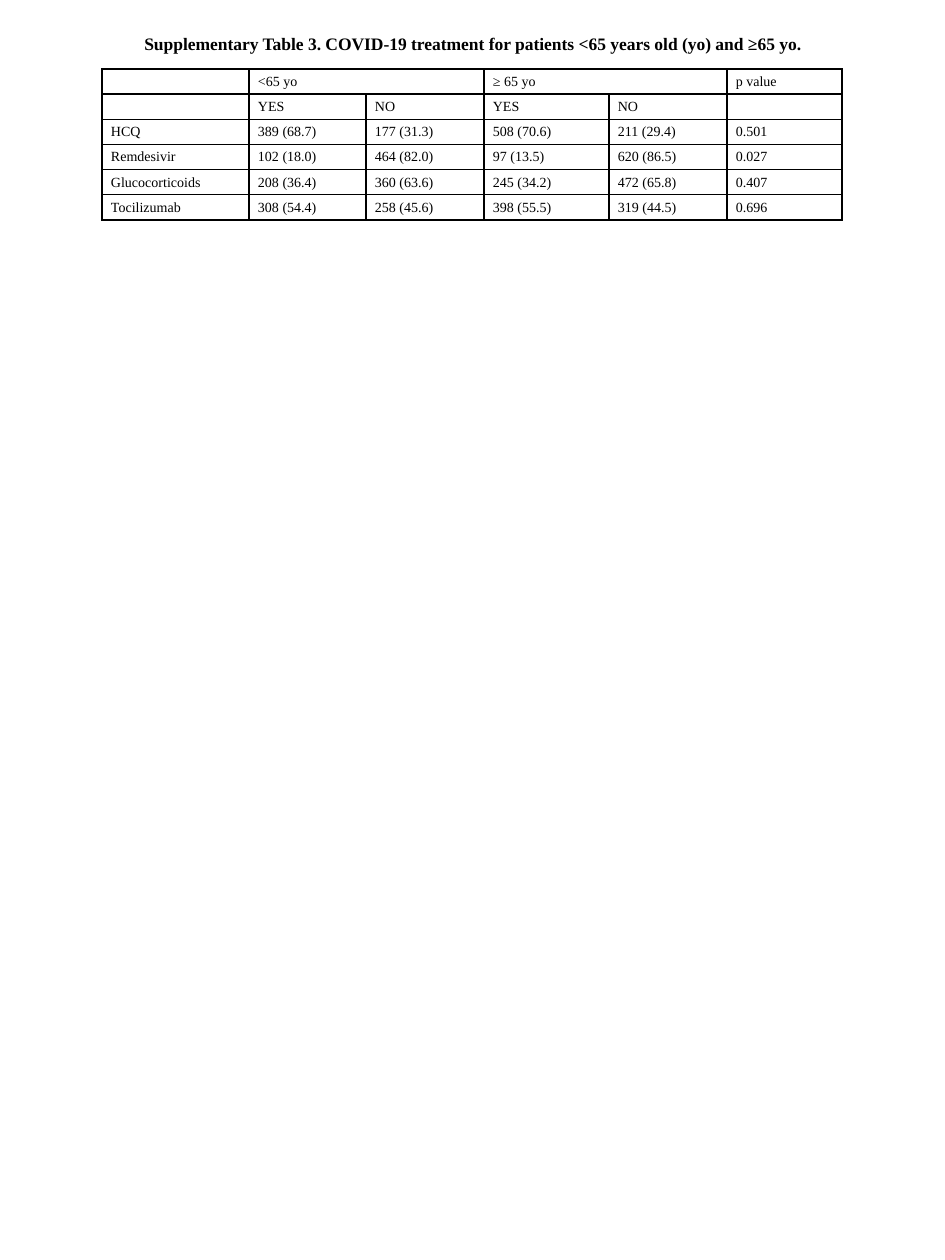
from lxml.etree import SubElement
from pptx import Presentation
from pptx.dml.color import RGBColor
from pptx.enum.text import MSO_ANCHOR, MSO_AUTO_SIZE, PP_ALIGN
from pptx.oxml.ns import qn
from pptx.util import Emu, Pt

PX_PER_INCH = 126
FONT = "Times New Roman"
COLORS = {"ink": "000000"}
TITLE = "Supplementary Table 3. COVID-19 treatment for patients <65 years old (yo) and ≥65 yo."
TREATMENTS = [
    ["", "<65 yo", "", "≥ 65 yo", "", "p value"],
    ["", "YES", "NO", "YES", "NO", ""],
    ["HCQ", "389 (68.7)", "177 (31.3)", "508 (70.6)", "211 (29.4)", "0.501"],
    ["Remdesivir", "102 (18.0)", "464 (82.0)", "97 (13.5)", "620 (86.5)", "0.027"],
    ["Glucocorticoids", "208 (36.4)", "360 (63.6)", "245 (34.2)", "472 (65.8)", "0.407"],
    ["Tocilizumab", "308 (54.4)", "258 (45.6)", "398 (55.5)", "319 (44.5)", "0.696"],
]
COLUMN_WIDTHS = [147, 117, 118, 125, 118, 115]
AGE_GROUP_COLUMNS = [1, 3]


def px(length):
    return Emu(round(length * 914400 / PX_PER_INCH))


def set_insets(holder):
    holder.margin_left = holder.margin_right = px(9)
    holder.margin_top = holder.margin_bottom = px(4)


def format_runs(paragraph, size, bold=False):
    for run in paragraph.runs:
        run.font.name = FONT
        run.font.size = Pt(size)
        run.font.bold = bold
        run.font.color.rgb = RGBColor.from_string(COLORS["ink"])


def add_borders(cell):
    properties = cell._tc.get_or_add_tcPr()
    for side in ("a:lnL", "a:lnR", "a:lnT", "a:lnB"):
        line = SubElement(properties, qn(side), w=str(Pt(1)))
        fill = SubElement(line, qn("a:solidFill"))
        SubElement(fill, qn("a:srgbClr"), val=COLORS["ink"])


def place_title(slide, left, top, width, height):
    title = slide.shapes.title
    title.left, title.top = px(left), px(top)
    title.width, title.height = px(width), px(height)
    frame = title.text_frame
    frame.text = TITLE
    frame.word_wrap = True
    frame.auto_size = MSO_AUTO_SIZE.SHAPE_TO_FIT_TEXT
    frame.vertical_anchor = MSO_ANCHOR.MIDDLE
    set_insets(frame)
    heading = frame.paragraphs[0]
    heading.alignment = PP_ALIGN.CENTER
    heading.line_spacing = 1.0
    heading.space_before = Pt(0)
    format_runs(heading, 10, bold=True)


def fill_cell(cell, wording):
    cell.text = wording
    cell.vertical_anchor = MSO_ANCHOR.MIDDLE
    set_insets(cell)
    paragraph = cell.text_frame.paragraphs[0]
    format_runs(paragraph, 8)
    if not wording:
        # Keeps an empty cell from stretching its row
        SubElement(paragraph._p, qn("a:endParaRPr"), sz="800")
    add_borders(cell)
    cell.fill.background()


def add_treatment_table(slide, left, top, width, height):
    table = slide.shapes.add_table(
        len(TREATMENTS), len(COLUMN_WIDTHS), px(left), px(top), px(width), px(height)
    ).table
    table.first_row = table.horz_banding = False
    for column, column_width in zip(table.columns, COLUMN_WIDTHS):
        column.width = px(column_width)
    for row_index, row in enumerate(TREATMENTS):
        for column_index, wording in enumerate(row):
            fill_cell(table.cell(row_index, column_index), wording)
    for first in AGE_GROUP_COLUMNS:
        table.cell(0, first).merge(table.cell(0, first + 1))


def main():
    presentation = Presentation()
    presentation.slide_width, presentation.slide_height = px(945), px(1260)
    slide = presentation.slides.add_slide(presentation.slide_layouts[5])
    place_title(slide, 0, 28, 945, 30)
    add_treatment_table(slide, 102, 69, sum(COLUMN_WIDTHS), 151)
    presentation.save("out.pptx")


if __name__ == "__main__":
    main()
